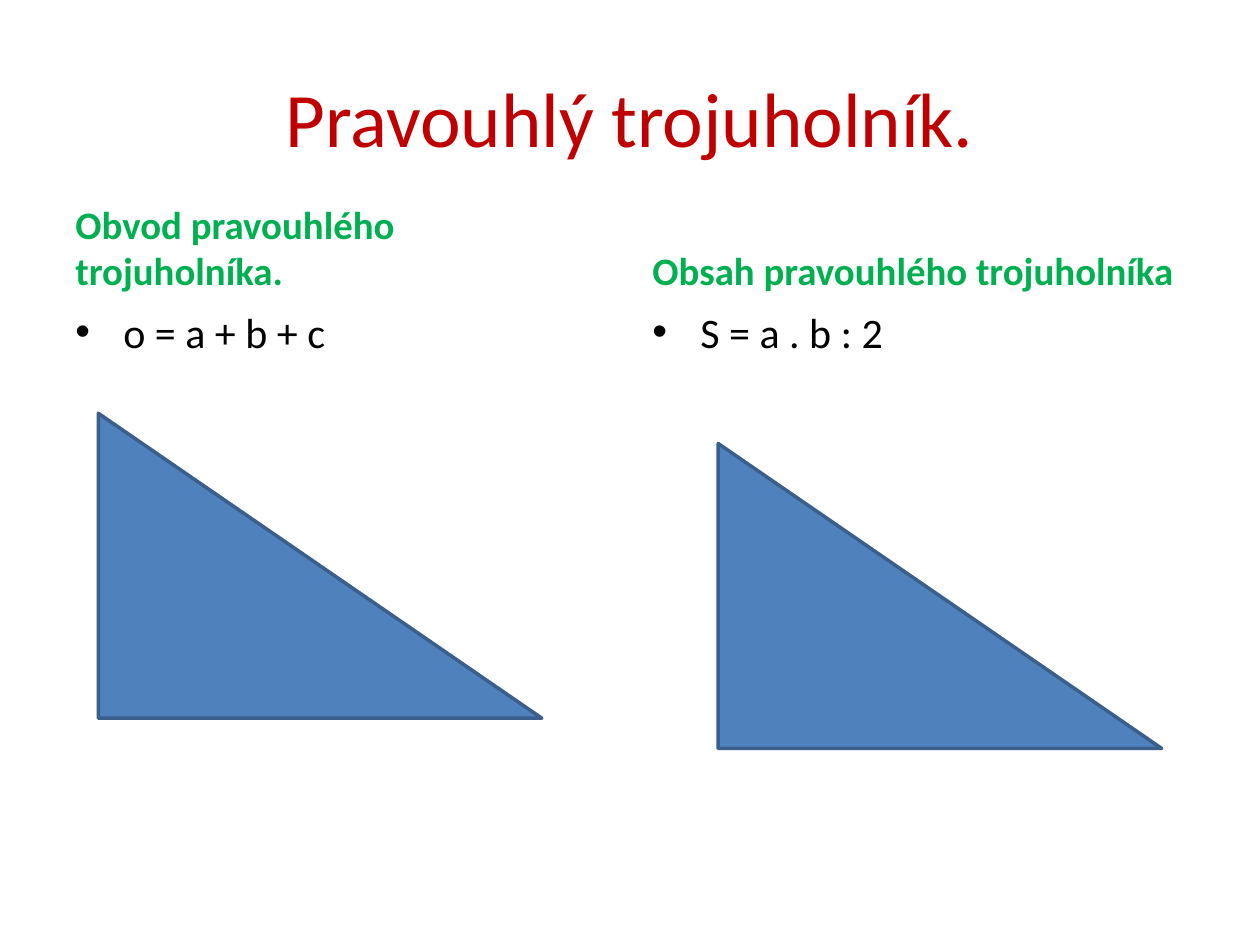
import pptx
import pptx.util
import pptx.dml.color
import pptx.enum.shapes
import pptx.enum.text
import pptx.oxml.ns
import lxml.etree

Inches = pptx.util.Inches
Pt = pptx.util.Pt
Anchor = pptx.enum.text.MSO_ANCHOR
Align = pptx.enum.text.PP_ALIGN


def color(code):
    return pptx.dml.color.RGBColor.from_string(code)


def add_text(slide, text, box, size, ink, anchor, bold=False, align=Align.LEFT):
    shape = slide.shapes.add_textbox(*map(Inches, box))
    frame = shape.text_frame
    frame.word_wrap = True
    frame.vertical_anchor = anchor
    frame.text = text
    para = frame.paragraphs[0]
    para.alignment = align
    font = para.runs[0].font
    font.name = "Calibri"
    font.size = Pt(size)
    font.bold = bold
    font.color.rgb = color(ink)
    return para


def add_bullet(para, indent):
    props = para._p.get_or_add_pPr()
    props.set("marL", str(Inches(indent)))
    props.set("indent", str(-Inches(indent)))
    qn = pptx.oxml.ns.qn
    lxml.etree.SubElement(props, qn("a:buFont")).set("typeface", "Arial")
    lxml.etree.SubElement(props, qn("a:buChar")).set("char", "•")


def add_column(slide, left, heading, formula):
    width = 4.42
    head = add_text(slide, heading, (left, 1.68, width, 0.7), 22.2,
                    "00B050", Anchor.BOTTOM, bold=True)
    head.space_before = Pt(4.44)
    item = add_text(slide, formula, (left, 2.38, width, 4.32), 24,
                    "000000", Anchor.TOP)
    item.space_before = Pt(4.8)
    add_bullet(item, 0.38)


def add_triangle(slide, left, top):
    kind = pptx.enum.shapes.MSO_SHAPE.RIGHT_TRIANGLE
    shape = slide.shapes.add_shape(
        kind, Inches(left), Inches(top), Inches(3.52), Inches(2.42))
    shape.shadow.inherit = False
    shape.fill.solid()
    shape.fill.fore_color.rgb = color("4F81BD")
    shape.line.color.rgb = color("3A5F8C")
    shape.line.width = Pt(2)


def main():
    deck = pptx.Presentation()
    deck.slide_width = Inches(10)
    deck.slide_height = Inches(7.5)
    slide = deck.slides.add_slide(deck.slide_layouts[6])

    # Title
    add_text(slide, "Pravouhlý trojuholník.", (0.5, 0.3, 9, 1.25), 44,
             "C00000", Anchor.MIDDLE, align=Align.CENTER)

    # Perimeter and area formulas
    add_column(slide, 0.5, "Obvod pravouhlého trojuholníka.", "o = a + b + c")
    add_column(slide, 5.08, "Obsah pravouhlého trojuholníka", "S = a . b : 2")

    # Triangles
    add_triangle(slide, 0.78, 3.28)
    add_triangle(slide, 5.7, 3.52)

    deck.save("out.pptx")


if __name__ == "__main__":
    main()
